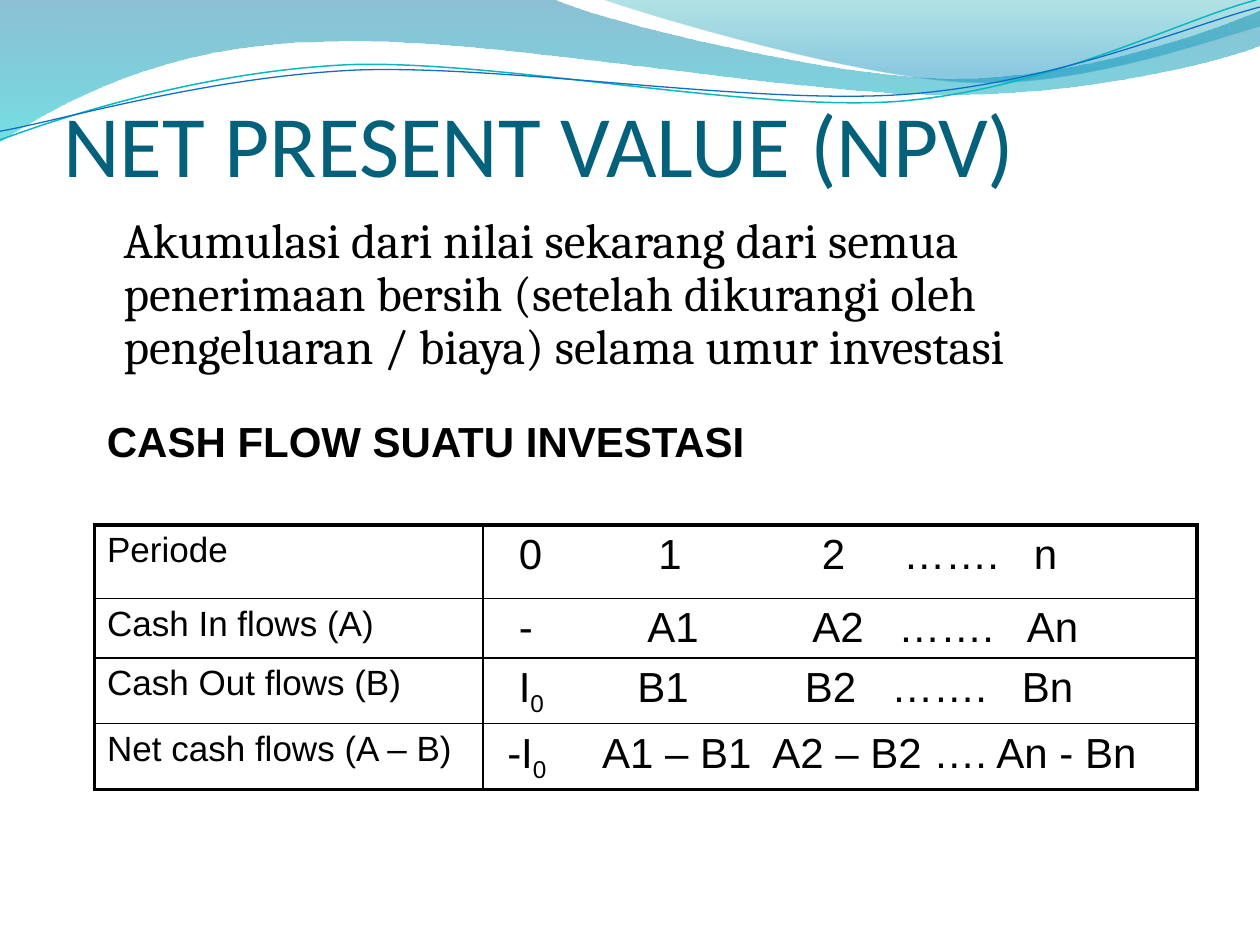
import dataclasses
import itertools
import typing

import lxml.etree
import pptx
import pptx.dml.color
import pptx.enum.text
import pptx.oxml.ns
import pptx.util

Pt = pptx.util.Pt
qn = pptx.oxml.ns.qn
Point = tuple[float, float]

COLORS = {
    "title": "04617B",
    "text": "000000",
    "deep_blue": "0074A1",
    "cyan": "00C6CF",
    "teal": "00A1A9",
    "sky": "008BBF",
    "teal_line": "0AB8BF",
    "blue_line": "0F6FC6",
}
THIN, THICK = 1, 2.25


@dataclasses.dataclass
class GradientStop:
    position: float
    color: str
    opacity: int


@dataclasses.dataclass
class Wave:
    start: Point
    segments: list[tuple[Point, ...]]
    stops: tuple[GradientStop, ...] = ()
    line_color: str = ""
    line_width: float = 0


@dataclasses.dataclass
class CashFlowRow:
    label: str
    runs: tuple[str, ...]
    tabs: tuple[float, ...]
    height: float


WAVES = [
    Wave(
        (0, 0),
        [
            ((317, 0),),
            ((343, 12), (478, 45), (546, 45)),
            ((614, 45), (690, 19), (720, 6)),
            ((720, 26),),
            ((708, 32), (626, 55), (537, 54)),
            ((448, 54), (275, 20), (185, 24)),
            ((93, 25), (33, 60), (0, 81)),
        ],
        stops=(GradientStop(0, "deep_blue", 45), GradientStop(1, "cyan", 55)),
    ),
    Wave(
        (345, 0),
        [
            ((367, 8), (491, 45), (554, 47)),
            ((616, 50), (692, 23), (720, 15)),
            ((720, 0),),
        ],
        stops=(GradientStop(0, "teal", 30), GradientStop(0.8, "sky", 45)),
    ),
    Wave(
        (0, 80),
        [
            ((35, 67), (114, 41), (199, 37)),
            ((284, 34), (427, 64), (513, 58)),
            ((600, 51), (675, 11), (718, 0)),
        ],
        line_color="teal_line",
        line_width=0.85,
    ),
    Wave(
        (0, 75),
        [
            ((34, 69), (118, 44), (204, 40)),
            ((290, 37), (430, 60), (516, 54)),
            ((602, 48), (678, 15), (720, 4)),
        ],
        line_color="blue_line",
        line_width=0.75,
    ),
]

ROWS = [
    CashFlowRow("Periode", ("\t0\t1\t2\t…….\tn",), (13.3, 93, 186.4, 233, 307.6), 42),
    CashFlowRow("Cash In flows (A)", ("\t-\tA1\tA2\t…….\tAn",), (13.3, 86.7, 181, 230.2, 303.6), 34),
    CashFlowRow("Cash Out flows (B)", ("\tI", "0", "\tB1\tB2\t…….\tBn"), (13.3, 81, 176.8, 226.2, 300.8), 37.6),
    CashFlowRow("Net cash flows (A – B)", ("\t-I", "0", "\tA1 – B1\tA2 – B2\t….\tAn - Bn"),
                (6.7, 60.9, 158.2, 250.2, 286.2), 37.6),
]


def rgb(name: str) -> pptx.dml.color.RGBColor:
    return pptx.dml.color.RGBColor.from_string(COLORS[name])


def curve_segments(shape: typing.Any, wave: Wave) -> None:
    lines = iter(list(shape._element.iter(qn("a:lnTo"))))
    for segment in wave.segments:
        first, *others = itertools.islice(lines, len(segment))
        if others:
            first.tag = qn("a:cubicBezTo")
            for line in others:
                first.append(line[0])
                line.getparent().remove(line)


def draw_wave(slide: typing.Any, wave: Wave) -> None:
    points = [(Pt(x), Pt(y)) for x, y in itertools.chain([wave.start], *wave.segments)]
    builder = slide.shapes.build_freeform(*points[0], scale=1.0)
    builder.add_line_segments(points[1:], close=bool(wave.stops))
    shape = builder.convert_to_shape()
    curve_segments(shape, wave)
    shape.shadow.inherit = False
    if not wave.stops:
        shape.fill.background()
        shape.line.color.rgb = rgb(wave.line_color)
        shape.line.width = Pt(wave.line_width)
        return
    shape.line.fill.background()
    shape.fill.gradient()
    shape.fill.gradient_angle = 270
    for target, stop in zip(shape.fill.gradient_stops, wave.stops):
        target.position = stop.position
        target.color.rgb = rgb(stop.color)
    for color, stop in zip(shape._element.spPr.iter(qn("a:srgbClr")), wave.stops):
        lxml.etree.SubElement(color, qn("a:alpha"), val=str(stop.opacity * 1000))


def format_runs(paragraph: typing.Any, font: str, size: float, color: str = "text", bold: bool = False) -> None:
    for run in paragraph.runs:
        run.font.name = font
        run.font.size = Pt(size)
        run.font.bold = bold
        run.font.color.rgb = rgb(color)


def add_text(slide: typing.Any, text: str, left: float, top: float, width: float, height: float) -> typing.Any:
    frame = slide.shapes.add_textbox(Pt(left), Pt(top), Pt(width), Pt(height)).text_frame
    frame.word_wrap = True
    frame.text = text
    return frame.paragraphs[0]


def format_cell(cell: typing.Any, borders: dict[str, float]) -> None:
    cell.margin_bottom = Pt(1)
    properties = cell._tc.get_or_add_tcPr()
    for side, width in borders.items():
        line = lxml.etree.SubElement(properties, qn(f"a:ln{side}"), w=str(Pt(width)))
        fill = lxml.etree.SubElement(line, qn("a:solidFill"))
        lxml.etree.SubElement(fill, qn("a:srgbClr"), val=COLORS["text"])
    cell.fill.background()


def draw_table(slide: typing.Any, left: float, top: float, widths: tuple[float, ...]) -> None:
    height = sum(row.height for row in ROWS)
    frame = slide.shapes.add_table(len(ROWS), len(widths), Pt(left), Pt(top), Pt(sum(widths)), Pt(height))
    table = frame.table
    for column, width in zip(table.columns, widths):
        column.width = Pt(width)
    for index, row in enumerate(ROWS):
        table.rows[index].height = Pt(row.height)
        label, values = table.cell(index, 0), table.cell(index, 1)
        label.text_frame.text = row.label
        format_runs(label.text_frame.paragraphs[0], "Arial", 20)
        paragraph = values.text_frame.paragraphs[0]
        tab_list = lxml.etree.SubElement(paragraph._p.get_or_add_pPr(), qn("a:tabLst"))
        for position in row.tabs:
            lxml.etree.SubElement(tab_list, qn("a:tab"), pos=str(Pt(position)), algn="l")
        for text, is_subscript in zip(row.runs, itertools.cycle((False, True))):
            run = paragraph.add_run()
            run.text = text
            if is_subscript:
                run.font._element.set("baseline", "-25000")
        format_runs(paragraph, "Arial", 24)
        top_width = THICK if index == 0 else THIN
        bottom_width = THICK if index == len(ROWS) - 1 else THIN
        format_cell(label, {"L": THICK, "R": THIN, "T": top_width, "B": bottom_width})
        format_cell(values, {"L": THIN, "R": THICK, "T": top_width, "B": bottom_width})


def draw_title(slide: typing.Any, text: str) -> None:
    title = slide.shapes.title
    title.left, title.top, title.width, title.height = Pt(36), Pt(21.6), Pt(648), Pt(90)
    slide.shapes._spTree.append(title._element)
    frame = title.text_frame
    frame.text = text
    frame.vertical_anchor = pptx.enum.text.MSO_ANCHOR.BOTTOM
    frame.margin_left = frame.margin_right = frame.margin_bottom = Pt(0)
    frame.paragraphs[0].alignment = pptx.enum.text.PP_ALIGN.LEFT
    format_runs(frame.paragraphs[0], "Calibri", 50, "title")


def main() -> None:
    presentation = pptx.Presentation()
    presentation.slide_width, presentation.slide_height = Pt(720), Pt(540)
    slide = presentation.slides.add_slide(presentation.slide_layouts[5])
    for wave in WAVES:
        draw_wave(slide, wave)
    draw_title(slide, "NET PRESENT VALUE (NPV)")
    definition = add_text(
        slide,
        "Akumulasi dari nilai sekarang dari semua penerimaan bersih "
        "(setelah dikurangi oleh pengeluaran / biaya) selama umur investasi",
        42, 120, 612, 108,
    )
    definition._p.get_or_add_pPr().set("marL", str(Pt(21.6)))
    definition.line_spacing = 0.9
    format_runs(definition, "Cambria", 28)
    draw_table(slide, 54, 300, (222, 408))
    heading = add_text(slide, "CASH FLOW SUATU INVESTASI", 54, 234, 414, 36)
    format_runs(heading, "Arial", 24, bold=True)
    presentation.save("out.pptx")


if __name__ == "__main__":
    main()
